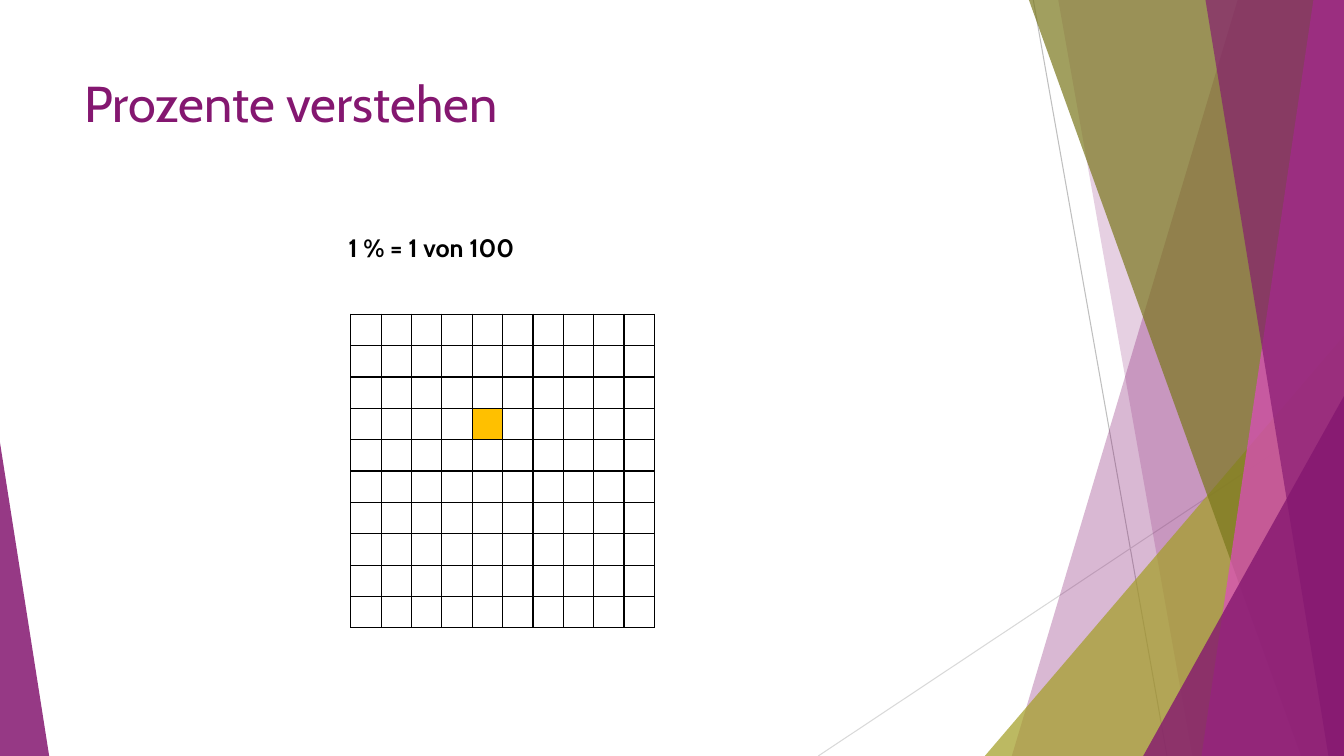
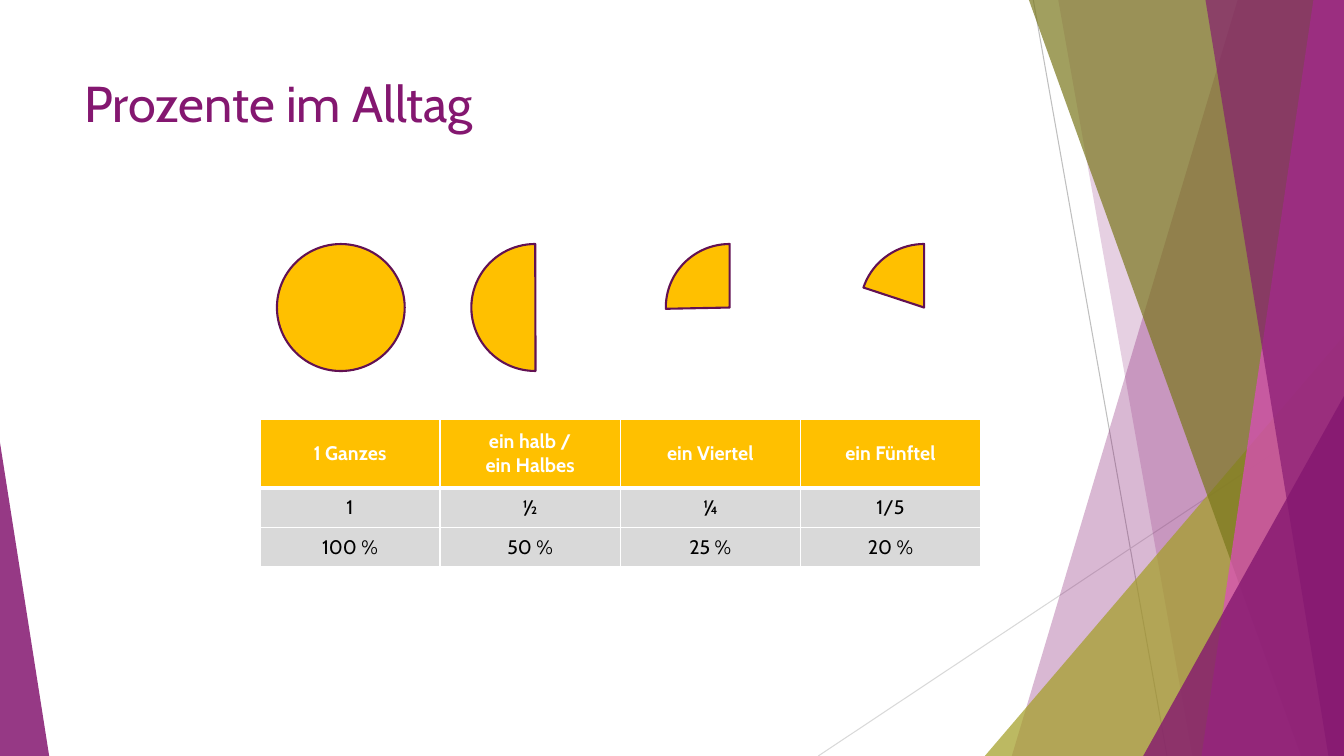
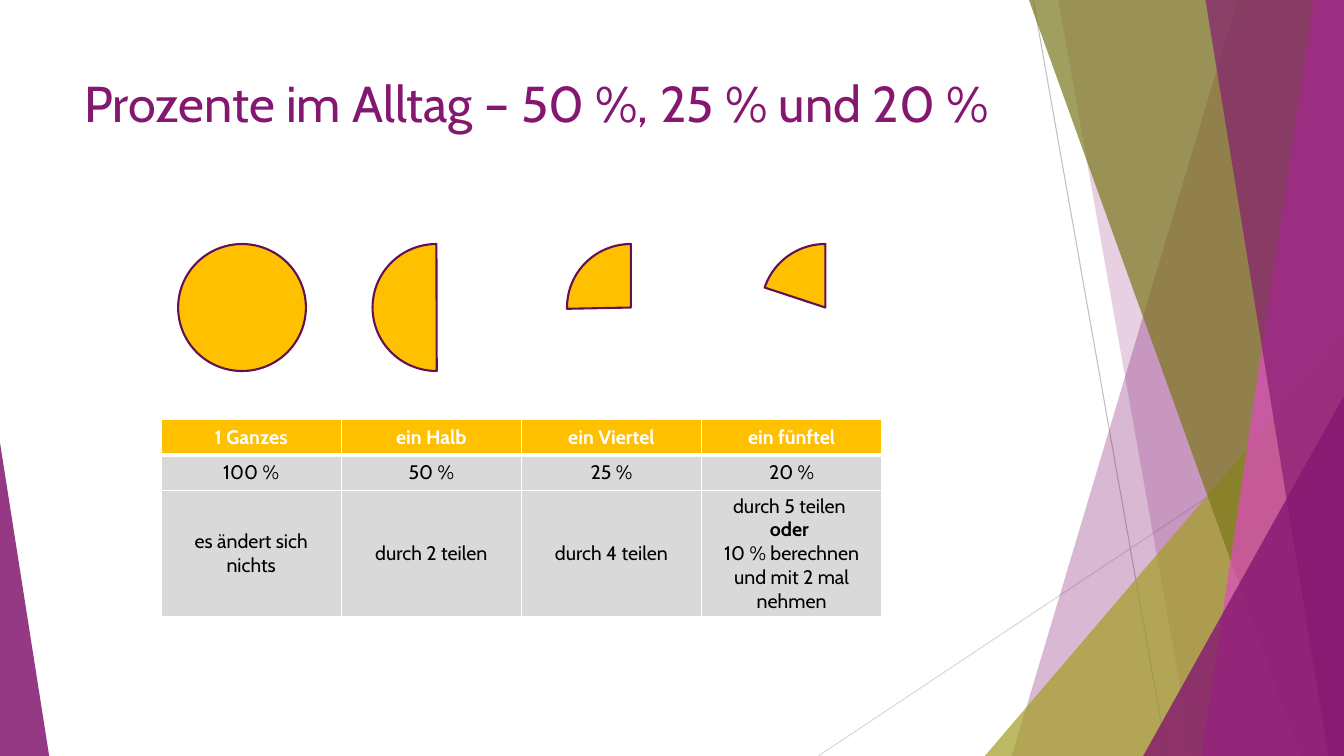
"""Build three slides that explain percentages."""
from dataclasses import dataclass

from lxml import etree
from pptx import Presentation
from pptx import util as u
from pptx.dml import color
from pptx.enum import shapes, text
from pptx.oxml import ns


@dataclass(frozen=True)
class Theme:
    """Colours, font and type sizes of the deck."""
    font: str = "Cabin"
    title_size: int = 36
    lead_size: int = 18
    table_size: int = 14
    plum: str = "841770"
    outline: str = "621153"
    pink: str = "DF4AC4"
    lime: str = "A39E26"
    olive: str = "7A771C"
    amber: str = "FFC000"
    grey: str = "D9D9D9"
    mid_grey: str = "BFBFBF"
    black: str = "000000"
    white: str = "FFFFFF"


@dataclass(frozen=True)
class Box:
    """A rectangle in centimetres."""
    left: float
    top: float
    width: float
    height: float

    def lengths(self):
        """Return left, top, width and height as lengths."""
        return [u.Cm(v) for v in (self.left, self.top, self.width, self.height)]


THEME = Theme()
PAGE = Box(0, 0, 33.87, 19.05)
TITLE = Box(1.88, 1.7, 23.88, 3.66)


def rgb(value):
    """Return a colour object for a hex value."""
    return color.RGBColor.from_string(value)


def paint(shape, fill, opacity=100, outline=None):
    """Give a shape its fill, opacity and outline."""
    shape.shadow.inherit = False
    shape.fill.solid()
    shape.fill.fore_color.rgb = rgb(fill)
    if opacity < 100:
        tint = shape.element.find(".//" + ns.qn("a:srgbClr"))
        etree.SubElement(tint, ns.qn("a:alpha"), val=str(opacity * 1000))
    if outline:
        shape.line.color.rgb = rgb(outline)
        shape.line.width = u.Pt(1.5)
    else:
        shape.line.fill.background()


def write(para, words, size, ink, bold=False):
    """Add words to a paragraph, with a line break at each newline."""
    for index, line in enumerate(words.split("\n")):
        if index:
            para.add_line_break()
        span = para.add_run()
        span.text = line
        span.font.name = THEME.font
        span.font.size = u.Pt(size)
        span.font.bold = bold
        span.font.color.rgb = rgb(ink)


def add_text(page, box, words, size, ink, bold=False):
    """Place a line of text in a box."""
    frame = page.shapes.add_textbox(*box.lengths()).text_frame
    frame.word_wrap = True
    frame.vertical_anchor = text.MSO_ANCHOR.TOP
    write(frame.paragraphs[0], words, size, ink, bold)


def add_hairline(page, start, end, ink):
    """Draw a thin straight line."""
    points = [u.Cm(v) for v in start + end]
    line = page.shapes.add_connector(shapes.MSO_CONNECTOR.STRAIGHT, *points)
    line.line.color.rgb = rgb(ink)
    line.line.width = u.Pt(0.75)
    etree.SubElement(line.element.spPr, ns.qn("a:effectLst"))


def add_band(page, box, top_x, bottom_x, fill, opacity):
    """Fill the area between a slanted edge and the right side of a box."""
    right, bottom = box.left + box.width, box.top + box.height
    corners = [(top_x, box.top), (right, box.top), (right, bottom), (bottom_x, bottom)]
    points = [(u.Cm(x), u.Cm(y)) for x, y in corners]
    outline = page.shapes.build_freeform(*points[0])
    outline.add_line_segments(points[1:])
    paint(outline.convert_to_shape(), fill, opacity)


def add_wedge(page, box, apex, fill, opacity):
    """Place a right-angled triangle with its apex at 0 (left) or 1 (right)."""
    wedge = page.shapes.add_shape(shapes.MSO_SHAPE.ISOSCELES_TRIANGLE, *box.lengths())
    wedge.adjustments[0] = apex
    paint(wedge, fill, opacity)


def add_backdrop(page, box):
    """Draw the slanted bands and lines that all slides share."""
    right, bottom = box.left + box.width, box.top + box.height
    add_hairline(page, (26.04, box.top), (29.41, bottom), THEME.mid_grey)
    add_hairline(page, (right, 10.24), (20.62, bottom), THEME.grey)
    add_band(page, box, 31.19, 25.5, THEME.plum, 30)
    add_band(page, box, 26.67, 30.05, THEME.plum, 20)
    add_wedge(page, Box(right - 9.05, bottom - 10.59, 9.05, 10.59), 1, THEME.lime, 72)
    add_band(page, box, 25.93, 32.79, THEME.olive, 70)
    add_band(page, box, 33.1, 30.28, THEME.pink, 70)
    add_band(page, box, 30.38, 33.48, THEME.plum, 65)
    add_wedge(page, Box(right - 5.06, bottom - 9.07, 5.06, 9.07), 1, THEME.plum, 80)
    add_wedge(page, Box(box.left, bottom - 7.9, 1.24, 7.9), 0, THEME.plum, 85)


def add_page(deck, title):
    """Add a slide with the shared backdrop and a title."""
    page = deck.slides.add_slide(deck.slide_layouts[6])
    add_backdrop(page, PAGE)
    add_text(page, TITLE, title, THEME.title_size, THEME.plum)
    return page


def set_borders(cell, ink, **widths):
    """Set the cell borders; widths in points by side, otherwise one point."""
    props = cell._tc.get_or_add_tcPr()
    for index, side in enumerate("LRTB"):
        width = u.Pt(widths.get(side, 1))
        edge = etree.Element(ns.qn("a:ln" + side), w=str(int(width)))
        fill = etree.SubElement(edge, ns.qn("a:solidFill"))
        etree.SubElement(fill, ns.qn("a:srgbClr"), val=ink)
        props.insert(index, edge)


def add_plain_table(page, box, heights, column_count):
    """Add an unbanded table with equal columns and given row heights."""
    frame = page.shapes.add_table(len(heights), column_count, *box.lengths())
    table = frame.table
    table.first_row = table.horz_banding = False
    for column in table.columns:
        column.width = u.Cm(box.width / column_count)
    for row, height in zip(table.rows, heights):
        row.height = u.Cm(height)
    return table


def set_margins(cell, side, end):
    """Set the cell margins in centimetres."""
    cell.margin_left = cell.margin_right = u.Cm(side)
    cell.margin_top = cell.margin_bottom = u.Cm(end)


def add_hundred_grid(page, box, marked):
    """Draw ten by ten squares, with one marked by row and column."""
    count = 10
    table = add_plain_table(page, box, [box.height / count] * count, count)
    for cell in table.iter_cells():
        set_margins(cell, 0, 0)
        cell.fill.background()
        set_borders(cell, THEME.black)
    chosen = table.cell(*marked)
    chosen.fill.solid()
    chosen.fill.fore_color.rgb = rgb(THEME.amber)


def add_fraction_table(page, box, rows, heights):
    """Draw a table with an amber header; a tuple holds a cell's paragraphs."""
    table = add_plain_table(page, box, heights, len(rows[0]))
    for r, row in enumerate(rows):
        header = r == 0
        for c, content in enumerate(row):
            cell = table.cell(r, c)
            set_margins(cell, 0.19, 0.1)
            cell.vertical_anchor = text.MSO_ANCHOR.MIDDLE
            cell.fill.solid()
            cell.fill.fore_color.rgb = rgb(THEME.amber if header else THEME.grey)
            set_borders(cell, THEME.white, T=3 if r == 1 else 1, B=3 if header else 1)
            lines = content if isinstance(content, tuple) else (content,)
            frame = cell.text_frame
            for index, line in enumerate(lines):
                para = frame.add_paragraph() if index else frame.paragraphs[0]
                para.alignment = text.PP_ALIGN.CENTER
                write(para, line, THEME.table_size, THEME.white if header else THEME.black,
                      bold=header or line.strip() == "oder")


def add_fraction_discs(page, box):
    """Draw a whole, a half, a quarter and a fifth of a disc in a row."""
    kinds = shapes.MSO_SHAPE
    parts = [(kinds.OVAL, None), (kinds.CHORD, 89.73),
             (kinds.PIE, 178.83), (kinds.PIE, 198.19)]
    disc_width, units_per_degree = 3.22, 0.6
    pitch = (box.width - disc_width) / (len(parts) - 1)
    for index, (kind, start) in enumerate(parts):
        place = Box(box.left + index * pitch, box.top, disc_width, box.height)
        disc = page.shapes.add_shape(kind, *place.lengths())
        if start is not None:
            disc.adjustments[0] = start * units_per_degree
            disc.adjustments[1] = 270 * units_per_degree
        paint(disc, THEME.amber, outline=THEME.outline)


def add_grid_slide(deck, title, lead):
    """Build the slide with the hundred squares."""
    page = add_page(deck, title)
    add_hundred_grid(page, Box(8.84, 7.92, 7.65, 7.9), (3, 4))
    add_text(page, Box(8.53, 5.72, 8.15, 1.03), lead, THEME.lead_size, THEME.black, True)


def add_fraction_slide(deck, title, left, rows, heights):
    """Build a slide with discs above a table of fractions."""
    page = add_page(deck, title)
    add_fraction_table(page, Box(left, 10.57, 18.16, sum(heights)), rows, heights)
    add_fraction_discs(page, Box(left + 0.43, 6.15, 17.92, 3.2))


def main():
    """Build and save the deck."""
    deck = Presentation()
    deck.slide_width, deck.slide_height = PAGE.lengths()[2:]
    percents = ["100 %", "50 %", "25 %", "20 %"]
    add_grid_slide(deck, "Prozente verstehen", "1 % = 1 von 100")
    add_fraction_slide(deck, "Prozente im Alltag", 6.55, [
        ["1 Ganzes", "ein halb /\nein Halbes", "ein Viertel", "ein Fünftel"],
        ["1", "½", "¼", "1/5"],
        percents,
    ], [1.73, 0.99, 0.99])
    add_fraction_slide(deck, "Prozente im Alltag – 50 %, 25 % und 20 %", 4.06, [
        ["1 Ganzes", "ein Halb", "ein Viertel", "ein fünftel"],
        percents,
        ["es ändert sich nichts", "durch 2 teilen", "durch 4 teilen",
         ("durch 5 teilen ", "oder ", "10 % berechnen und mit 2 mal nehmen")],
    ], [0.89, 0.89, 3.18])
    deck.save("out.pptx")


if __name__ == "__main__":
    main()
